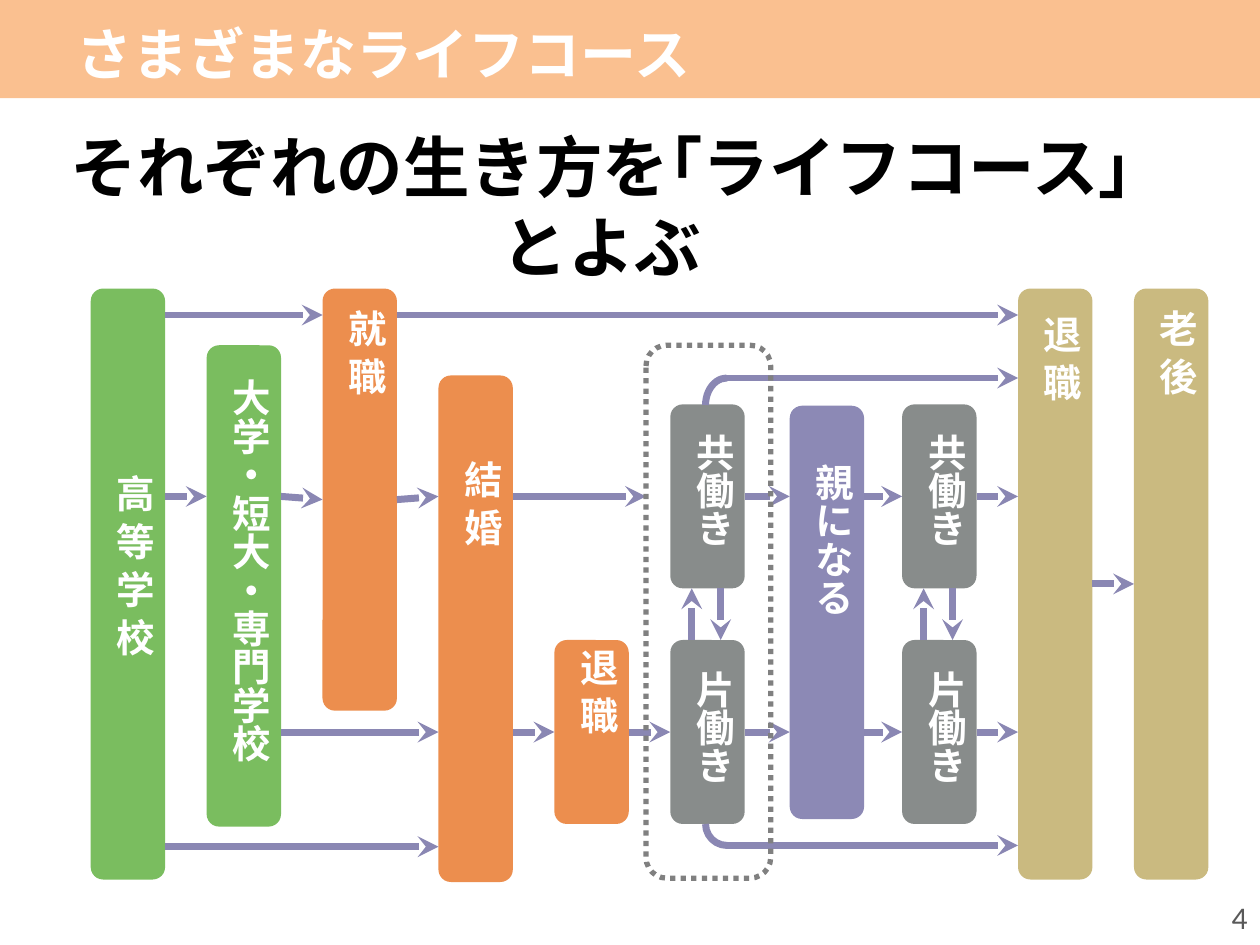
from lxml.etree import SubElement
from pptx import Presentation
from pptx.dml.color import RGBColor
from pptx.enum.dml import MSO_LINE
from pptx.enum.shapes import MSO_CONNECTOR, MSO_SHAPE
from pptx.enum.text import MSO_ANCHOR, PP_ALIGN
from pptx.oxml.ns import qn
from pptx.util import Inches, Pt

JP = "Noto Sans CJK JP"
GREEN, ORANGE, GRAY, PURPLE, SAND = "7ABD5F", "EC8E4E", "888C8B", "8C89B5", "CABA80"
ARROW = "8A87B3"
PITCH, WIDTH = 0.92, 0.59
TOP, UPPER, LOWER, BOTTOM = 0.21, 1.65, 3.52, 4.43
PARENT = 6.03

# label, column, top, height, colour, space above the label
BARS = [
    ("高 等 学 校", 0, 0, 4.69, GREEN, 1.38),
    ("大学・短大・専門学校", 1, 0.45, 3.82, GREEN, 0.17),
    ("就 職", 2, 0, 3.35, ORANGE, 0.07),
    ("結 婚", 3, 0.69, 4.02, ORANGE, 0.58),
    ("退 職", 4, 2.79, 1.46, ORANGE, -0.03),
    ("共働き", 5, 0.92, 1.46, GRAY, 0.13),
    ("片働き", 5, 2.79, 1.46, GRAY, 0.14),
    ("親になる", PARENT, 0.93, 3.28, PURPLE, 0.36),
    ("共働き", 7, 0.92, 1.46, GRAY, 0.13),
    ("片働き", 7, 2.79, 1.46, GRAY, 0.14),
    ("退 職", 8, 0, 4.69, SAND, 0.12),
    ("老 後", 9, 0, 4.69, SAND, 0.07),
]
# height of the arrow, column it leaves, column it reaches
FLOWS = [
    (TOP, 0, 2), (TOP, 2, 8),
    (UPPER, 0, 1), (UPPER, 1, 2), (UPPER, 2, 3), (UPPER, 3, 4.79),
    (UPPER, 5, PARENT), (UPPER, PARENT, 7), (UPPER, 7, 8),
    (LOWER, 1, 3), (LOWER, 3, 4), (LOWER, 4, 5),
    (LOWER, 5, PARENT), (LOWER, PARENT, 7), (LOWER, 7, 8),
    (BOTTOM, 0, 3), (2.345, 8, 9),
]


def paint(color):
    return RGBColor.from_string(color)


def block(slide, kind, x, y, w, h, fill=None, line=None, width=4):
    shape = slide.shapes.add_shape(kind, Inches(x), Inches(y), Inches(w), Inches(h))
    shape.shadow.inherit = False
    if fill:
        shape.fill.solid()
        shape.fill.fore_color.rgb = paint(fill)
    else:
        shape.fill.background()
    if line:
        shape.line.color.rgb = paint(line)
        shape.line.width = Pt(width)
    else:
        shape.line.fill.background()
    return shape


def write(slide, text, x, y, w, h, size=22, color="FFFFFF", bold=True, font=JP,
          align=PP_ALIGN.LEFT, anchor=MSO_ANCHOR.TOP, upright=False):
    frame = slide.shapes.add_textbox(Inches(x), Inches(y), Inches(w), Inches(h)).text_frame
    frame.word_wrap = True
    frame.vertical_anchor = anchor
    if upright:
        frame._txBody.bodyPr.set("vert", "eaVert")
    para = frame.paragraphs[0]
    para.alignment = align
    run = para.add_run()
    run.text = text
    run.font.size, run.font.bold, run.font.name = Pt(size), bold, font
    run.font.color.rgb = paint(color)
    SubElement(run.font._element, qn("a:ea")).set("typeface", font)


def glue(join, x, y, bars):
    """Join a connector's end to the bar whose side has its middle at x, y."""
    near = Inches(0.05)
    for bar in bars:
        left, top, w, h = bar.left, bar.top, bar.width, bar.height
        sides = [(left + w / 2, top), (left, top + h / 2),
                 (left + w / 2, top + h), (left + w, top + h / 2)]
        for side, (px, py) in enumerate(sides):
            if abs(px - Inches(x)) < near and abs(py - Inches(y)) < near:
                join(bar, side)
                return


def arrow(slide, x1, y1, x2, y2, bars):
    line = slide.shapes.add_connector(
        MSO_CONNECTOR.STRAIGHT, Inches(x1), Inches(y1), Inches(x2), Inches(y2))
    line.line.color.rgb = paint(ARROW)
    line.line.width = Pt(4)
    SubElement(line.line._get_or_add_ln(), qn("a:tailEnd")).set("type", "stealth")
    SubElement(line._element.spPr, qn("a:effectLst"))
    glue(line.begin_connect, x1, y1, bars)
    glue(line.end_connect, x2, y2, bars)


def curve(slide, x, y, w, h, start, end):
    """Draw an arc between two angles in degrees, clockwise from the right."""
    arc = block(slide, MSO_SHAPE.ARC, x, y, w, h, line=ARROW)
    arc.adjustments[0] = start * 0.6
    arc.adjustments[1] = end * 0.6


def header(slide, x, y, w, h):
    block(slide, MSO_SHAPE.RECTANGLE, x, y, w, h, fill="FAC090")
    write(slide, "さまざまなライフコース", x + 0.51, y + 0.03, 7.27, h,
          size=32, anchor=MSO_ANCHOR.MIDDLE)


def course(slide, x, y):
    def left(col):
        return x + col * PITCH

    def right(col):
        return left(col) + WIDTH

    bars = []
    for label, col, top, high, color, pad in BARS:
        bars.append(block(slide, MSO_SHAPE.ROUNDED_RECTANGLE,
                          left(col), y + top, WIDTH, high, fill=color))
        write(slide, label, right(col) - 0.58, y + top + pad, 0.57, high - pad, upright=True)
    for level, start, end in FLOWS:
        arrow(slide, right(start), y + level, left(end), y + level, bars)
    for col in (5, 7):
        up, down = left(col) + 0.17, left(col) + 0.4
        arrow(slide, up, y + 2.79, up, y + 2.38, bars)
        arrow(slide, down, y + 2.38, down, y + 2.79, bars)

    bend = left(5) + 0.28
    curve(slide, bend, y + 0.71, 0.34, 0.43, 180, 270)
    curve(slide, bend, y + 4.08, 0.34, 0.34, 90, 180)
    for level in (0.71, 4.42):
        arrow(slide, bend + 0.16, y + level, left(8), y + level, bars)
    frame = block(slide, MSO_SHAPE.ROUNDED_RECTANGLE, left(4.79), y + 0.45, 0.99, 4.23,
                  line="808080", width=3)
    frame.line.dash_style = MSO_LINE.ROUND_DOT


def main():
    deck = Presentation()
    deck.slide_width, deck.slide_height = Inches(10), Inches(7.5)
    slide = deck.slides.add_slide(deck.slide_layouts[6])
    header(slide, 0, 0, 10, 0.78)
    write(slide, "それぞれの生き方を｢ライフコース｣とよぶ", 0.25, 0.95, 9.05, 0.74,
          size=38, color="000000", align=PP_ALIGN.CENTER)
    course(slide, 0.72, 2.29)
    write(slide, "4", 7.67, 7.08, 2.33, 0.4, size=18, color="595959", bold=False,
          font="Calibri", align=PP_ALIGN.RIGHT, anchor=MSO_ANCHOR.MIDDLE)
    deck.save("out.pptx")


if __name__ == "__main__":
    main()
